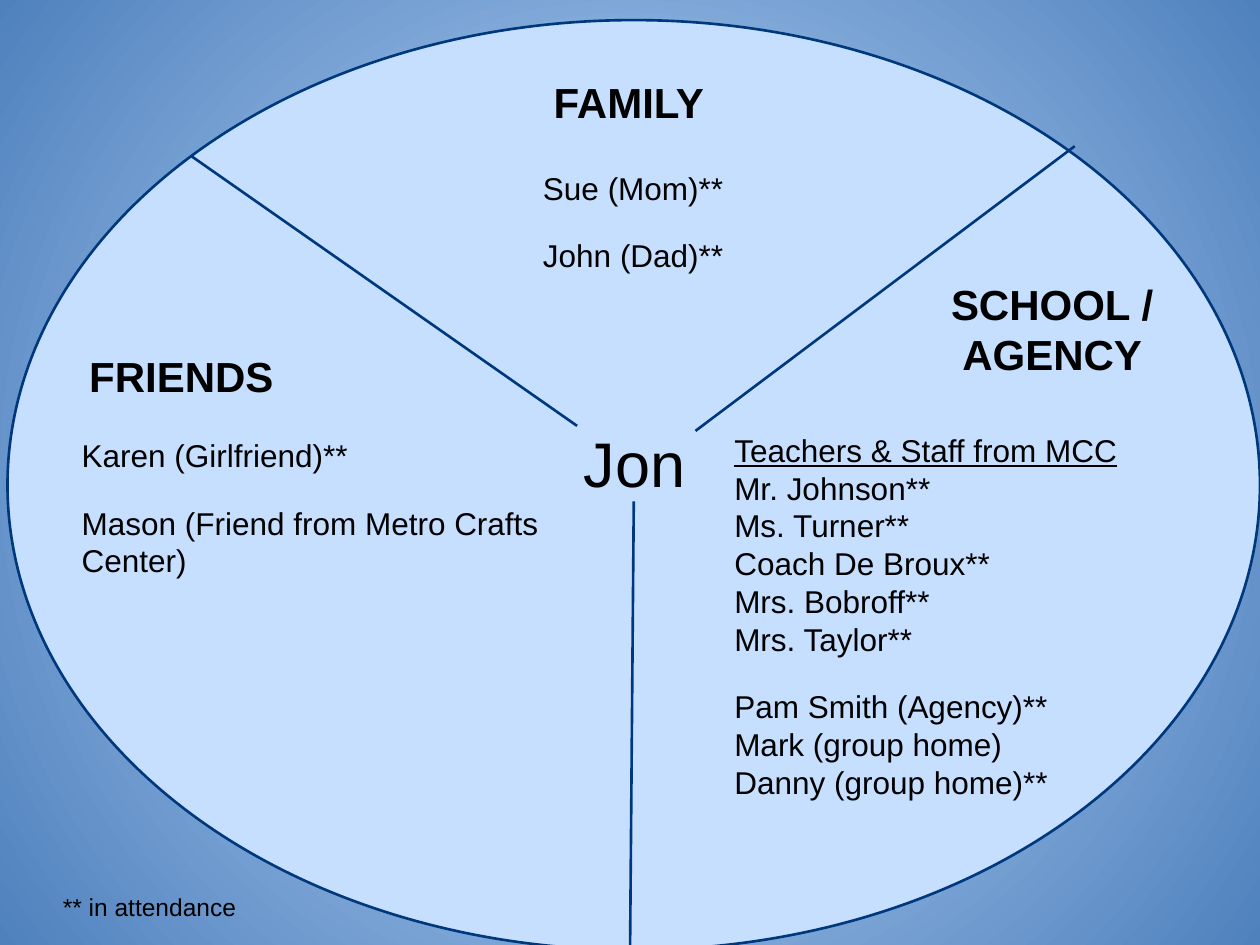
import pptx
import pptx.dml.color
import pptx.enum.shapes
import pptx.enum.text
import pptx.oxml
import pptx.oxml.ns
import pptx.util
from pptx.util import Inches

COLORS = {"light": "C6DFFF", "edge": "4F81BD", "outline": "00387E", "text": "000000"}
FONT = "Arial"
LEFT = pptx.enum.text.PP_ALIGN.LEFT
CENTER = pptx.enum.text.PP_ALIGN.CENTER

CIRCLE = (0.06, 0.16, 9.94, 7.38)
DIVIDERS = [
    (1.52, 1.24, 4.58, 3.38),
    (8.53, 1.16, 5.52, 3.42),
    (5.03, 3.98, 5, 7.6),
]
PERSON = ("Jon", (4.03, 3.27, 2.01, 0.81))
HEADINGS = [
    ("FAMILY", (3.49, 0.51, 3, 0.46), CENTER),
    ("SCHOOL / AGENCY", (7.44, 2.11, 1.82, 0.57), CENTER),
    ("FRIENDS", (0.61, 2.68, 2.33, 0.87), LEFT),
]
# Each list holds groups of lines; a gap separates the groups.
FAMILY = [["Sue (Mom)**"], ["John (Dad)**"]]
FRIENDS = [["Karen (Girlfriend)**"], ["Mason (Friend from Metro Crafts Center)"]]
STAFF_TITLE = "Teachers & Staff from MCC"
SCHOOL = [
    [STAFF_TITLE, "Mr. Johnson**", "Ms. Turner**", "Coach De Broux**",
     "Mrs. Bobroff**", "Mrs. Taylor**"],
    ["Pam Smith (Agency)**", "Mark (group home)", "Danny (group home)**"],
]
LISTS = [
    (FAMILY, (3.14, 1.24, 3.77, 1.04), CENTER),
    (FRIENDS, (0.55, 3.36, 3.91, 1.35), LEFT),
    (SCHOOL, (5.73, 3.32, 3.63, 3.4), LEFT),
]
FOOTNOTE = ("** in attendance", (0.4, 7.03, 1.59, 0.34))


def rgb(name):
    return pptx.dml.color.RGBColor.from_string(COLORS[name])


def set_outline(line):
    line.color.rgb = rgb("outline")
    line.width = pptx.util.Pt(1.5)


def set_background(slide):
    """Radial gradient, light in the middle."""
    fill = slide.background.fill
    fill.gradient()
    for stop, name in zip(fill.gradient_stops, ("light", "edge")):
        stop.color.rgb = rgb(name)
    fill.gradient_stops[0].position = 0
    fill.gradient_stops[1].position = 1
    gradient = slide.background._cSld.find(".//" + pptx.oxml.ns.qn("a:gradFill"))
    gradient.replace(gradient.find(pptx.oxml.ns.qn("a:lin")), pptx.oxml.parse_xml(
        f'<a:path {pptx.oxml.ns.nsdecls("a")} path="circle">'
        '<a:fillToRect l="50000" t="50000" r="50000" b="50000"/></a:path>'))


def add_divider(slide, ends):
    connector = slide.shapes.add_connector(
        pptx.enum.shapes.MSO_CONNECTOR.STRAIGHT, *map(Inches, ends))
    set_outline(connector.line)
    connector._element.spPr.append(pptx.oxml.parse_xml(
        f'<a:effectLst {pptx.oxml.ns.nsdecls("a")}/>'))


def write_groups(shape, groups, size, alignment, bold=False, margin=0.1):
    frame = shape.text_frame
    frame.word_wrap = True
    frame.auto_size = pptx.enum.text.MSO_AUTO_SIZE.SHAPE_TO_FIT_TEXT
    frame.vertical_anchor = pptx.enum.text.MSO_ANCHOR.TOP
    frame.margin_left = frame.margin_right = Inches(0.1)
    frame.margin_top = frame.margin_bottom = Inches(margin)
    frame.text = "\n".join(line for group in groups for line in group)
    starts_group = [index == 0 for group in groups for index in range(len(group))]
    for index, paragraph in enumerate(frame.paragraphs):
        paragraph.alignment = alignment
        paragraph.space_before = pptx.util.Pt(17 if index and starts_group[index] else 0)
        font = paragraph.runs[0].font
        font.name = FONT
        font.size = pptx.util.Pt(size)
        font.bold = bold
        font.underline = paragraph.text == STAFF_TITLE
        font.color.rgb = rgb("text")


def add_text(slide, box, groups, size, alignment, **options):
    shape = slide.shapes.add_textbox(*map(Inches, box))
    write_groups(shape, groups, size, alignment, **options)
    return shape


def main():
    presentation = pptx.Presentation()
    presentation.slide_width = Inches(10)
    presentation.slide_height = Inches(7.5)
    slide = presentation.slides.add_slide(presentation.slide_layouts[5])
    set_background(slide)

    circle = slide.shapes.add_shape(
        pptx.enum.shapes.MSO_SHAPE.OVAL, *map(Inches, CIRCLE))
    circle.shadow.inherit = False
    circle.fill.solid()
    circle.fill.fore_color.rgb = rgb("light")
    set_outline(circle.line)

    name, box = PERSON
    title = slide.shapes.title
    title.left, title.top, title.width, title.height = map(Inches, box)
    write_groups(title, [[name]], 36, CENTER)
    circle._element.addnext(title._element)  # bring the title in front of the circle

    for ends in DIVIDERS:
        add_divider(slide, ends)
    for text, box, alignment in HEADINGS:
        add_text(slide, box, [[text]], 24, alignment, bold=True)
    for groups, box, alignment in LISTS:
        add_text(slide, box, groups, 18, alignment)
    text, box = FOOTNOTE
    footnote = add_text(slide, box, [[text]], 14, LEFT, margin=0.05)
    footnote.text_frame.word_wrap = False

    presentation.save("out.pptx")


if __name__ == "__main__":
    main()
